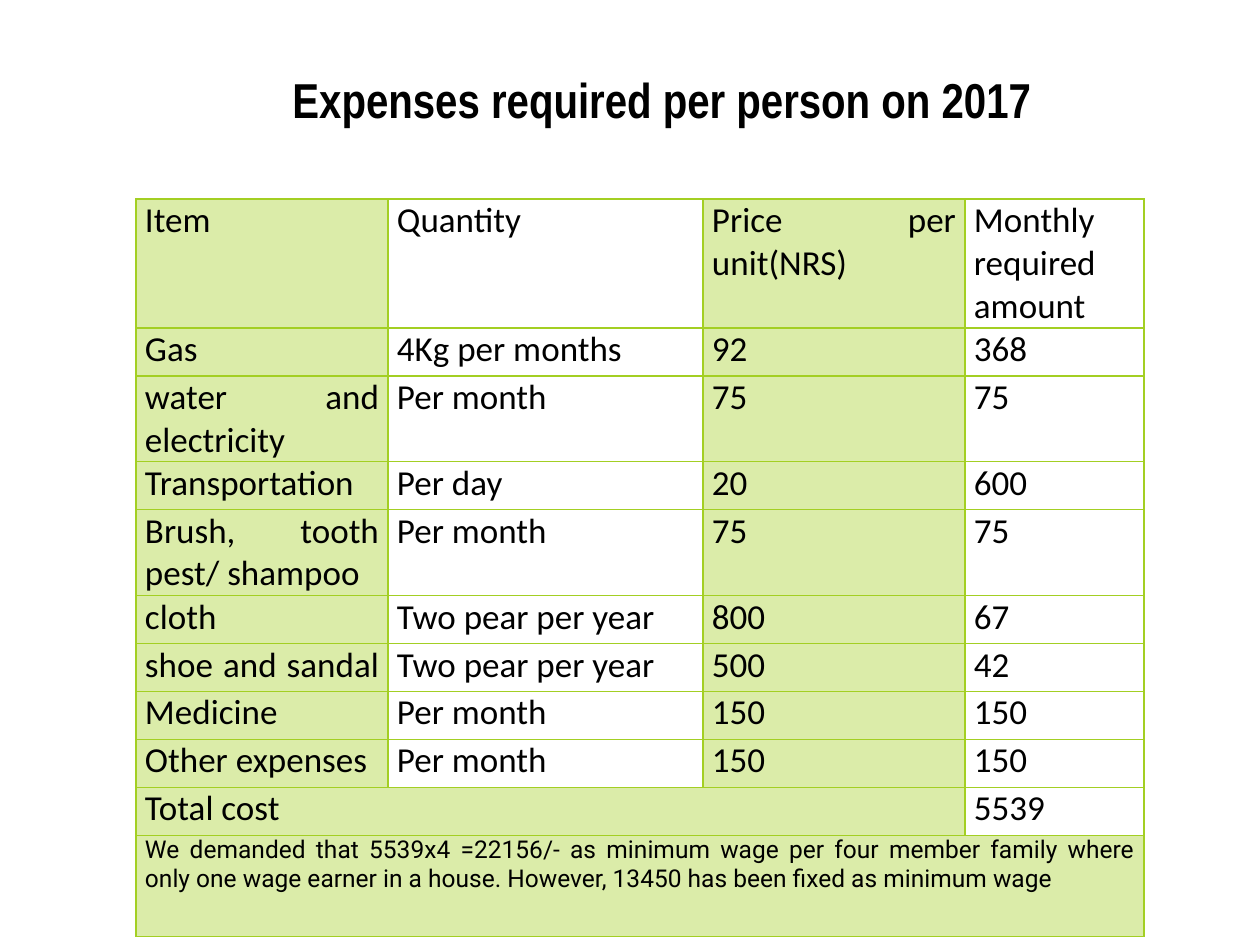
import lxml.etree
import pptx
import pptx.dml.color
import pptx.enum.text
import pptx.oxml.ns
import pptx.util

EMU_PER_INCH = 914400
PX_PER_INCH = 126
ALIGN = pptx.enum.text.PP_ALIGN


def px(length):
    """Turn whole pixels into EMU."""
    return pptx.util.Emu(round(length * EMU_PER_INCH / PX_PER_INCH))


def color(hex_string):
    return pptx.dml.color.RGBColor.from_string(hex_string)


def add_element(parent, tag, **attributes):
    return lxml.etree.SubElement(parent, pptx.oxml.ns.qn(tag), attributes)


class ExpenseSlide:
    text_color = "000000"
    border_color = "A3CF23"
    fill_color = "A5D028"
    fill_alpha = 40
    cell_margin = 9

    def __init__(self, presentation):
        self.slide = presentation.slides.add_slide(presentation.slide_layouts[6])

    def format_text(self, text_frame, text, font_name, size, alignment, bold=False):
        text_frame.text = text
        text_frame.word_wrap = True
        for paragraph in text_frame.paragraphs:
            paragraph.alignment = alignment
            for run in paragraph.runs:
                run.font.name = font_name
                run.font.size = pptx.util.Pt(size)
                run.font.bold = bold
                run.font.color.rgb = color(self.text_color)

    def add_title(self, text, left, top, width, height):
        shape = self.slide.shapes.add_textbox(px(left), px(top), px(width), px(height))
        frame = shape.text_frame
        frame.margin_left = frame.margin_right = px(6)
        frame.margin_top = frame.margin_bottom = px(6)
        self.format_text(frame, text, "Arial Narrow", 28, ALIGN.CENTER, bold=True)

    def style_cell(self, cell, shaded):
        cell.margin_left = cell.margin_right = px(self.cell_margin)
        cell.margin_top = cell.margin_bottom = 0
        properties = cell._tc.get_or_add_tcPr()
        for side in ("L", "R", "T", "B"):
            line = add_element(properties, f"a:ln{side}", w=str(pptx.util.Pt(0.75)))
            fill = add_element(line, "a:solidFill")
            add_element(fill, "a:srgbClr", val=self.border_color)
        if shaded:
            fill = add_element(properties, "a:solidFill")
            tint = add_element(fill, "a:srgbClr", val=self.fill_color)
            add_element(tint, "a:alpha", val=str(self.fill_alpha * 1000))
        else:
            add_element(properties, "a:noFill")

    def add_table(self, rows, left, top, widths, heights):
        """Add a table whose short rows let their first cell span the free columns."""
        columns = len(widths)
        table = self.slide.shapes.add_table(
            len(rows), columns, px(left), px(top), px(sum(widths)), px(sum(heights))
        ).table
        table.first_row = table.horz_banding = False
        for column, width in zip(table.columns, widths):
            column.width = px(width)
        for row, height in zip(table.rows, heights):
            row.height = px(height)

        for row_index, texts in enumerate(rows):
            span = columns - len(texts) + 1
            for column_index in range(columns):
                shaded = column_index % 2 == 0 or column_index < span and span > 1
                self.style_cell(table.cell(row_index, column_index), shaded)
            if span > 1:
                table.cell(row_index, 0).merge(table.cell(row_index, span - 1))
            font_name, size = ("Roboto", 14) if span == columns else ("Calibri", 20)
            for text_index, text in enumerate(texts):
                column_index = text_index + span - 1 if text_index else 0
                frame = table.cell(row_index, column_index).text_frame
                self.format_text(frame, text, font_name, size, ALIGN.JUSTIFY)


EXPENSES = [
    ["Item", "Quantity", "Price per unit(NRS)", "Monthly required amount"],
    ["Gas", "4Kg per months", "92", "368"],
    ["water and electricity", "Per month", "75", "75"],
    ["Transportation", "Per day", "20", "600"],
    ["Brush, tooth pest/ shampoo", "Per month", "75", "75"],
    ["cloth", "Two pear per year", "800", "67"],
    ["shoe and sandal ", "Two pear per year", "500", "42"],
    ["Medicine", "Per month", "150", "150"],
    ["Other expenses", "Per month", "150", "150"],
    ["Total cost", "5539"],
    ["We demanded that 5539x4 =22156/- as minimum wage per four member family where "
     "only one wage earner in a house. However, 13450 has been fixed as minimum wage"],
]
COLUMN_WIDTHS = [252, 315, 262, 179]
ROW_HEIGHTS = [129, 48, 85, 48, 86, 48, 48, 48, 48, 48, 101]


def main():
    presentation = pptx.Presentation()
    presentation.slide_width = px(1260)
    presentation.slide_height = px(945)
    slide = ExpenseSlide(presentation)
    slide.add_table(EXPENSES, 136, 199, COLUMN_WIDTHS, ROW_HEIGHTS)
    slide.add_title("Expenses required per person on 2017", 84, 63, 1155, 93)
    presentation.save("out.pptx")


if __name__ == "__main__":
    main()
